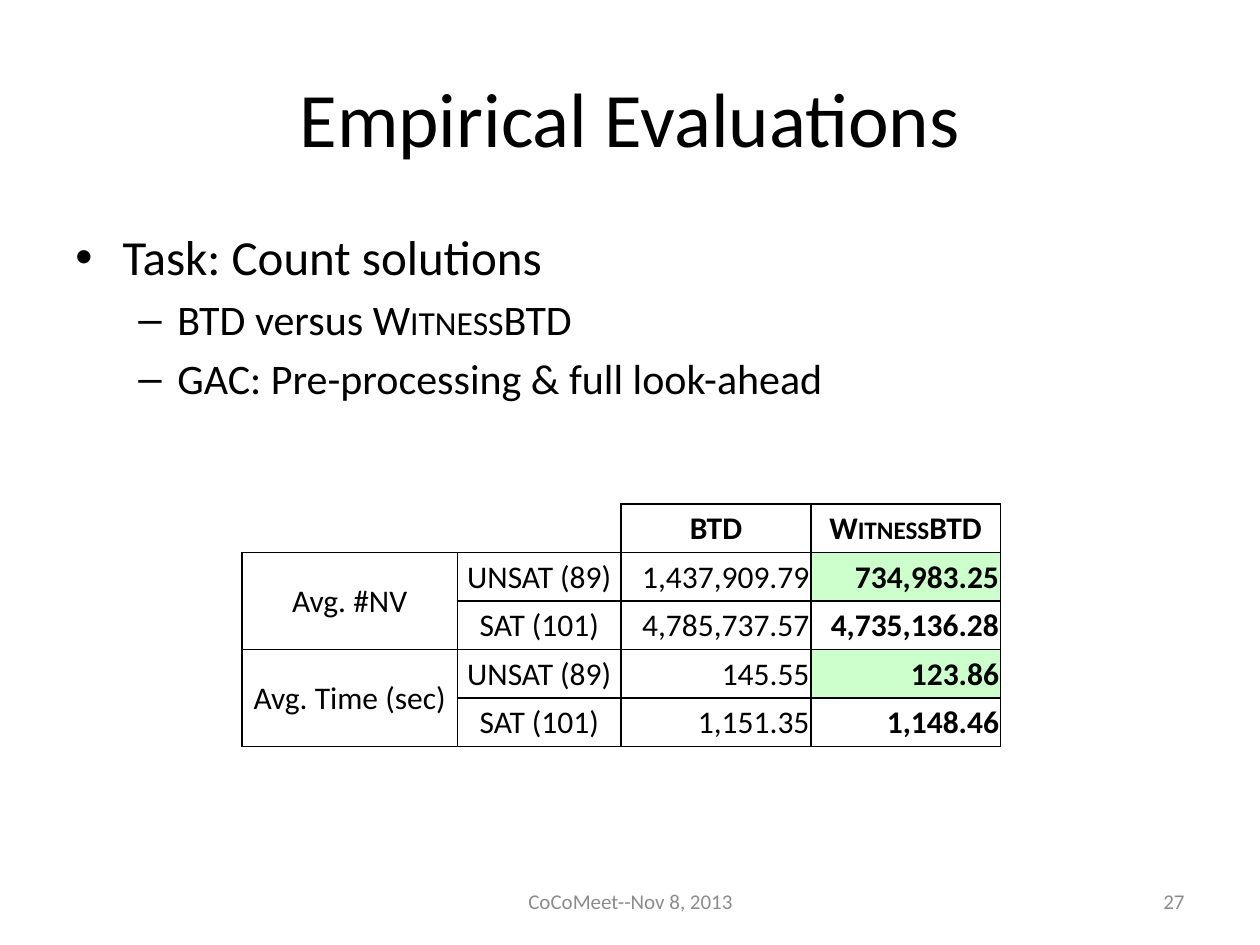
from dataclasses import dataclass

from lxml import etree
from pptx import Presentation
from pptx.dml.color import RGBColor
from pptx.enum.text import MSO_ANCHOR, PP_ALIGN
from pptx.oxml.ns import qn
from pptx.util import Pt

PX = 4572  # EMU per px, 200 px to the inch
LEFT, CENTER, RIGHT = PP_ALIGN.LEFT, PP_ALIGN.CENTER, PP_ALIGN.RIGHT
TOP, MIDDLE = MSO_ANCHOR.TOP, MSO_ANCHOR.MIDDLE


@dataclass(frozen=True)
class Theme:
    font: str = "Calibri"
    ink: str = "000000"
    muted: str = "8C8C8C"
    best: str = "CCFFCC"
    title: int = 44
    task: int = 28
    detail: int = 24
    cell: int = 18
    footer: int = 12
    border: int = 1


def set_all(obj, **values):
    for name, value in values.items():
        setattr(obj, name, value)


def sub(parent, tag, **attrs):
    return etree.SubElement(parent, qn(tag), {k: str(v) for k, v in attrs.items()})


class Deck:
    def __init__(self, theme, width, height):
        self.theme = theme
        self.prs = Presentation()
        set_all(self.prs, slide_width=width * PX, slide_height=height * PX)
        self.s = self.prs.slides.add_slide(self.prs.slide_layouts[6])

    def run(self, p, text, size, color=None, bold=False, small_caps=False):
        r = p.add_run()
        r.text = text
        set_all(r.font, name=self.theme.font, size=Pt(size), bold=bold)
        r.font.color.rgb = RGBColor.from_string(color or self.theme.ink)
        if small_caps:
            r.font._element.set("cap", "small")

    def frame(self, x, y, w, h, anchor):
        tf = self.s.shapes.add_textbox(x * PX, y * PX, w * PX, h * PX).text_frame
        set_all(tf, word_wrap=True, vertical_anchor=anchor)
        return tf

    def label(self, box, text, size, align, color=None):
        p = self.frame(*box, MIDDLE).paragraphs[0]
        p.alignment = align
        self.run(p, text, size, color)

    def bullets(self, box, items):
        """Each item is (bullet, size, left margin, hanging indent, runs)."""
        tf = self.frame(*box, TOP)
        for i, (bullet, size, margin, hang, runs) in enumerate(items):
            p = tf.add_paragraph() if i else tf.paragraphs[0]
            p.alignment = LEFT
            pPr = p._p.get_or_add_pPr()
            pPr.set("marL", str(margin * PX))
            pPr.set("indent", str(-hang * PX))
            sub(sub(pPr, "a:spcBef"), "a:spcPct", val=20000)
            sub(pPr, "a:buFont", typeface="Arial")
            sub(pPr, "a:buChar", char=bullet)
            for text, small_caps in runs:
                self.run(p, text, size, small_caps=small_caps)

    def borders(self, cell, sides):
        tcPr = cell._tc.get_or_add_tcPr()
        for side in "LRTB":
            ln = sub(tcPr, f"a:ln{side}", w=Pt(self.theme.border))
            if side in sides:
                sub(sub(ln, "a:solidFill"), "a:srgbClr", val=self.theme.ink)
            else:
                sub(ln, "a:noFill")

    def table(self, x, y, cols, row_h, rows, open_sides, best_cells):
        """open_sides gives the drawn sides of cells that are not fully boxed."""
        shape = self.s.shapes.add_table(len(rows), len(cols), x * PX, y * PX,
                                        sum(cols) * PX, row_h * len(rows) * PX)
        tbl = shape.table
        set_all(tbl, first_row=False, horz_banding=False)
        for column, w in zip(tbl.columns, cols):
            column.width = w * PX
        for i, row in enumerate(rows):
            tbl.rows[i].height = row_h * PX
            for j, text in enumerate(row):
                cell = tbl.cell(i, j)
                set_all(cell, vertical_anchor=MIDDLE, margin_left=2 * PX,
                        margin_right=2 * PX, margin_top=2 * PX, margin_bottom=0)
                self.borders(cell, open_sides.get((i, j), "LRTB"))
                if (i, j) in best_cells:
                    cell.fill.solid()
                    cell.fill.fore_color.rgb = RGBColor.from_string(self.theme.best)
                else:
                    cell.fill.background()
                if text:
                    p = cell.text_frame.paragraphs[0]
                    p.alignment = RIGHT if i and j > 1 else CENTER
                    self.run(p, text, self.theme.cell, bold=j == 3 or i == 0,
                             small_caps=i == 0 and j == 3)
        return tbl


def main():
    t = Theme()
    deck = Deck(t, 2000, 1500)
    deck.label((100, 60, 1800, 250), "Empirical Evaluations", t.title, CENTER)
    deck.label((684, 1390, 634, 80), "CoCoMeet--Nov 8, 2013", t.footer, CENTER, t.muted)
    deck.label((1434, 1390, 466, 80), "27", t.footer, RIGHT, t.muted)

    task, detail = ("•", t.task, 75, 75), ("–", t.detail, 162, 62)
    deck.bullets((100, 350, 1800, 990), [
        (*task, [("Task: Count solutions", False)]),
        (*detail, [("BTD versus ", False), ("WitnessBTD", True)]),
        (*detail, [("GAC: Pre-processing & full look-ahead", False)]),
    ])

    rows = [
        ("", "", "BTD", "WitnessBTD"),
        ("Avg. #NV", "UNSAT (89)", "1,437,909.79", "734,983.25"),
        ("", "SAT (101)", "4,785,737.57", "4,735,136.28"),
        ("Avg. Time (sec)", "UNSAT (89)", "145.55", "123.86"),
        ("", "SAT (101)", "1,151.35", "1,148.46"),
    ]
    tbl = deck.table(384, 800, (342, 260, 301, 301), 77, rows,
                     open_sides={(0, 0): "B", (0, 1): "RB"},
                     best_cells={(1, 3), (3, 3)})
    for first in (1, 3):
        tbl.cell(first, 0).merge(tbl.cell(first + 1, 0))
    deck.prs.save("out.pptx")


if __name__ == "__main__":
    main()
